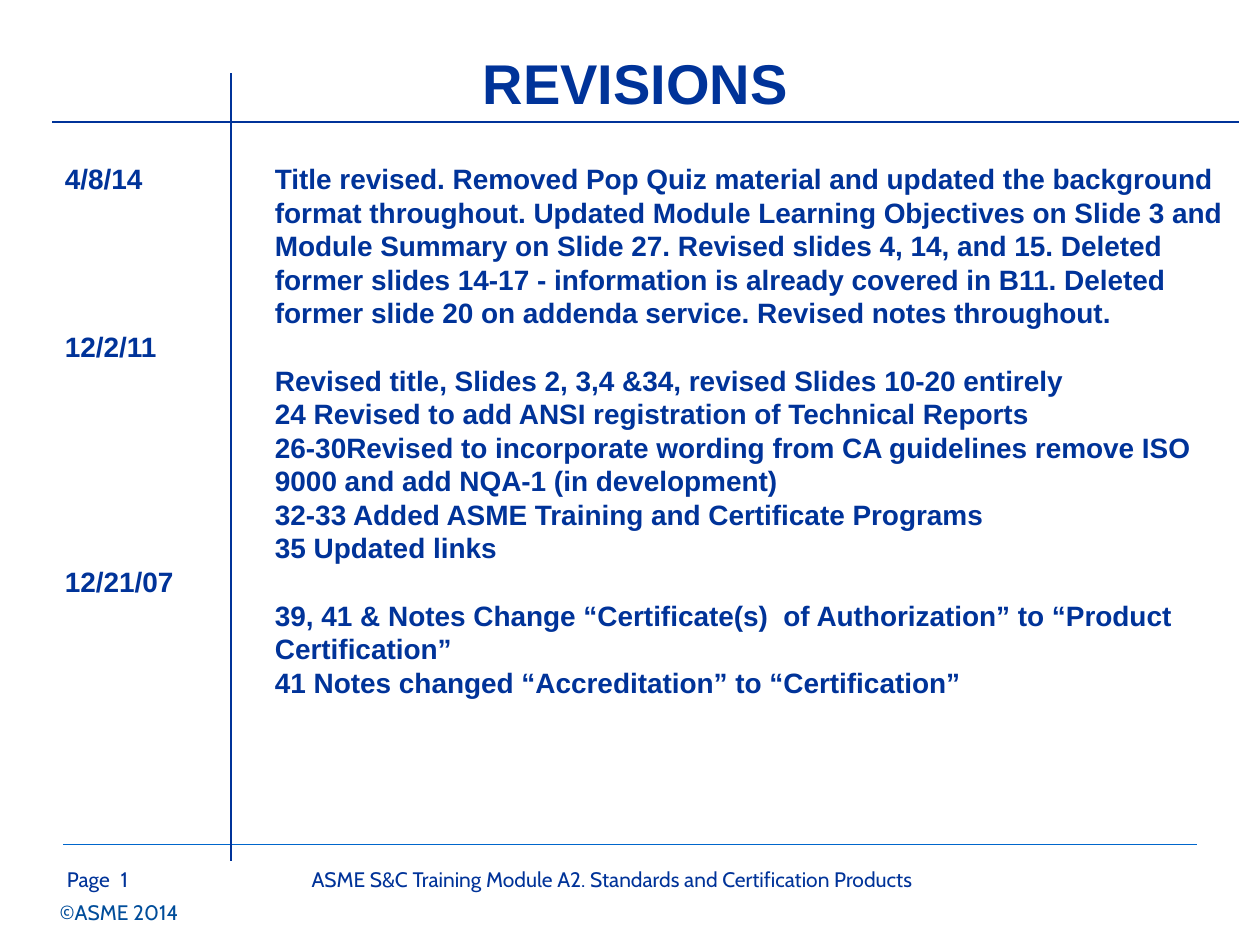
from lxml.etree import SubElement
from pptx import Presentation
from pptx.dml.color import RGBColor
from pptx.enum.shapes import MSO_CONNECTOR as Link
from pptx.enum.text import MSO_ANCHOR as Anchor, PP_ALIGN as Align
from pptx.oxml.ns import qn
from pptx.util import Inches, Pt

WIDE, HIGH = Inches(10), Inches(7.5)
UNIT = WIDE / 120
NAVY, BLUE, STEEL = "003399", "0066CC", "004D9A"
LEAD = 19.2

DATES = [("4/8/14", 0), ("12/2/11", 4), ("12/21/07", 6)]
NOTES = [
    ("Title revised. Removed Pop Quiz material and updated the background "
     "format throughout. Updated Module Learning Objectives on Slide 3 and "
     "Module Summary on Slide 27. Revised slides 4, 14, and 15. Deleted "
     "former slides 14-17 - information is already covered in B11. Deleted "
     "former slide 20 on addenda service. Revised notes throughout.", 0),
    ("Revised title, Slides 2, 3,4 &34, revised Slides 10-20 entirely", 1),
    ("24 Revised to add ANSI registration of Technical Reports", 0),
    ("26-30Revised to incorporate wording from CA guidelines remove ISO "
     "9000 and add NQA-1 (in development)", 0),
    ("32-33 Added ASME Training and Certificate Programs", 0),
    ("35 Updated links", 0),
    ("39, 41 & Notes Change “Certificate(s)  of Authorization” to “Product "
     "Certification”", 1),
    ("41 Notes changed “Accreditation” to “Certification”", 0),
]


def grid(*cells):
    """Turn grid cells into slide lengths."""
    return [round(cell * UNIT) for cell in cells]


def tint(code):
    """Return the colour of a hex string."""
    return RGBColor.from_string(code)


def rule(slide, ends, code, width):
    """Draw a straight line between two grid points."""
    line = slide.shapes.add_connector(Link.STRAIGHT, *grid(*ends))
    line.line.color.rgb = tint(code)
    line.line.width = Pt(width)
    SubElement(line._element.spPr, qn("a:effectLst"))


def frame(slide, box, wrap=True):
    """Add an empty text box and return its frame."""
    text = slide.shapes.add_textbox(*grid(*box)).text_frame
    text.word_wrap = wrap
    return text


def write(para, words, size, face, code=NAVY, bold=False):
    """Add one styled run to a paragraph."""
    run = para.add_run()
    run.text = words
    font = run.font
    font.size, font.name, font.bold = Pt(size), face, bold
    font.color.rgb = tint(code)


def title(slide, box):
    """Place the centred heading."""
    text = frame(slide, box)
    text.vertical_anchor = Anchor.MIDDLE
    para = text.paragraphs[0]
    para.alignment = Align.CENTER
    write(para, "REVISIONS", 32, "Arial", bold=True)


def column(slide, box, items):
    """Stack entries, each with its count of open lines above."""
    text = frame(slide, box)
    for spot, (words, skip) in enumerate(items):
        para = text.add_paragraph() if spot else text.paragraphs[0]
        para.line_spacing = Pt(LEAD)
        para.space_before = Pt(skip * LEAD)
        write(para, words, 16, "Arial", bold=True)


def table(slide, box):
    """Place the dates, the notes and the lines that part them."""
    left, top, wide, high = box
    first = top + 3.2
    column(slide, (left, first, 17, high - 3.2), DATES)
    column(slide, (left + 20, first, wide - 20, high - 3.2), NOTES)
    rule(slide, (left + 17, top - 4.6, left + 17, top + 70.4), NAVY, 1)
    rule(slide, (left, top, left + wide, top), NAVY, 1)


def footer(slide, box):
    """Place the closing line, page, module name and copyright."""
    left, top, wide, high = box
    rule(slide, (left, top, left + wide, top), BLUE, 0.75)
    parts = [
        ("Page", -0.8, 1.5, 12, NAVY, Align.LEFT, False),
        ("1", 4.3, 1.5, 5.6, NAVY, Align.LEFT, True),
        ("ASME S&C Training Module A2. Standards and Certification Products",
         12.3, 1.5, 80, NAVY, Align.CENTER, True),
        ("©ASME 2014", -1.5, 4.7, 14, STEEL, Align.LEFT, False),
    ]
    for words, col, row, span, code, side, wrap in parts:
        text = frame(slide, (left + col, top + row, span, 3.6), wrap)
        para = text.paragraphs[0]
        para.alignment = side
        write(para, words, 12, "Cabin", code)


def main():
    """Build and save the slide."""
    deck = Presentation()
    deck.slide_width, deck.slide_height = WIDE, HIGH
    slide = deck.slides.add_slide(deck.slide_layouts[6])
    footer(slide, (6, 80.4, 108, 8))
    title(slide, (8, 4, 105, 7.6))
    table(slide, (5, 11.6, 113, 71.4))
    deck.save("out.pptx")


if __name__ == "__main__":
    main()
